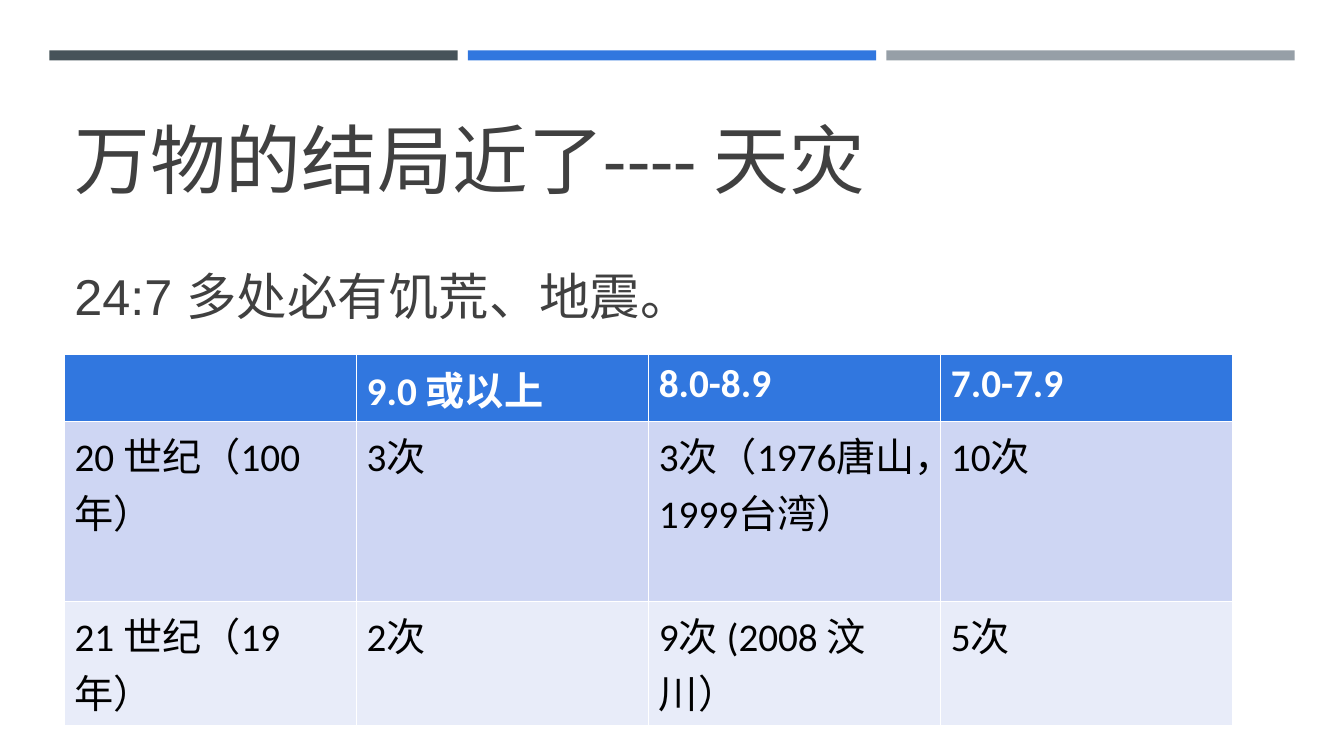
from dataclasses import dataclass

from pptx import Presentation
from pptx.dml.color import RGBColor
from pptx.enum import shapes, text
from pptx.util import Inches, Pt


@dataclass(frozen=True)
class Theme:
    dark: str = "465359"
    accent: str = "3177DF"
    grey: str = "969FA7"
    heading: str = "404040"
    white: str = "FFFFFF"
    black: str = "000000"
    first_band: str = "CED6F3"
    second_band: str = "E8ECF9"
    title_size: int = 54
    verse_size: int = 36
    table_size: int = 28
    title_font: str = "Calibri"
    verse_font: str = "Arial"


@dataclass(frozen=True)
class Row:
    height: float
    fill: str
    color: str
    bold: bool
    cells: tuple[str, ...]


THEME = Theme()
MARGIN = 0.64
TEXT_WIDTH = 12.06
BAR_LEFT, BAR_TOP, BAR_WIDTH, BAR_HEIGHT, BAR_PITCH = 0.49, 0.5, 4.05, 0.1, 4.15
BAR_COLORS = (THEME.dark, THEME.accent, THEME.grey)
TABLE_TOP, TABLE_WIDTH = 3.52, 11.59

EARTHQUAKES = (
    Row(0.65, THEME.accent, THEME.white, True,
        ("", "9.0 或以上", "8.0-8.9", "7.0-7.9")),
    Row(1.78, THEME.first_band, THEME.black, False,
        ("20 世纪（100年）", "3次", "3次（1976唐山，1999台湾）", "10次")),
    Row(1.23, THEME.second_band, THEME.black, False,
        ("21 世纪（19年）", "2次", "9次 (2008 汶川）", "5次")),
)


def write(frame, content: str, font: str, size: int, color: str, bold: bool = False) -> None:
    paragraph = frame.paragraphs[0]
    paragraph.alignment = text.PP_ALIGN.LEFT
    target = paragraph.font
    if content:
        run = paragraph.add_run()
        run.text = content
        target = run.font
    for name, value in {"name": font, "size": Pt(size), "bold": bold}.items():
        setattr(target, name, value)
    target.color.rgb = RGBColor.from_string(color)


def format_frame(frame, anchor) -> None:
    settings = {
        "word_wrap": True,
        "auto_size": text.MSO_AUTO_SIZE.NONE,
        "vertical_anchor": anchor,
    }
    for name, value in settings.items():
        setattr(frame, name, value)


def add_bars(slide) -> None:
    for index, color in enumerate(BAR_COLORS):
        bar = slide.shapes.add_shape(
            shapes.MSO_SHAPE.RECTANGLE, Inches(BAR_LEFT + index * BAR_PITCH),
            Inches(BAR_TOP), Inches(BAR_WIDTH), Inches(BAR_HEIGHT))
        bar.shadow.inherit = False
        bar.fill.solid()
        bar.fill.fore_color.rgb = RGBColor.from_string(color)
        bar.line.fill.background()


def add_title(slide) -> None:
    title = slide.shapes.title
    place = {"left": MARGIN, "top": 0.77, "width": TEXT_WIDTH, "height": 1.3}
    for name, value in place.items():
        setattr(title, name, Inches(value))
    format_frame(title.text_frame, text.MSO_ANCHOR.BOTTOM)
    write(title.text_frame, "万物的结局近了---- 天灾",
          THEME.title_font, THEME.title_size, THEME.heading)


def add_verse(slide) -> None:
    verse = slide.shapes.add_textbox(
        Inches(MARGIN), Inches(2.45), Inches(TEXT_WIDTH), Inches(0.95))
    format_frame(verse.text_frame, text.MSO_ANCHOR.MIDDLE)
    write(verse.text_frame, "24:7 多处必有饥荒、地震。",
          THEME.verse_font, THEME.verse_size, THEME.heading)


def add_earthquake_table(slide, rows: tuple[Row, ...]) -> None:
    column_count = len(rows[0].cells)
    table = slide.shapes.add_table(
        len(rows), column_count, Inches(MARGIN), Inches(TABLE_TOP),
        Inches(TABLE_WIDTH), Inches(sum(row.height for row in rows))).table
    for row_index, row in enumerate(rows):
        table.rows[row_index].height = Inches(row.height)
        for column_index, content in enumerate(row.cells):
            cell = table.cell(row_index, column_index)
            cell.fill.solid()
            cell.fill.fore_color.rgb = RGBColor.from_string(row.fill)
            write(cell.text_frame, content, THEME.title_font,
                  THEME.table_size, row.color, row.bold)


def main() -> None:
    presentation = Presentation()
    presentation.slide_width = Inches(13.33)
    presentation.slide_height = Inches(7.5)
    slide = presentation.slides.add_slide(presentation.slide_layouts[5])
    add_bars(slide)
    add_title(slide)
    add_verse(slide)
    add_earthquake_table(slide, EARTHQUAKES)
    presentation.save("out.pptx")


if __name__ == "__main__":
    main()
